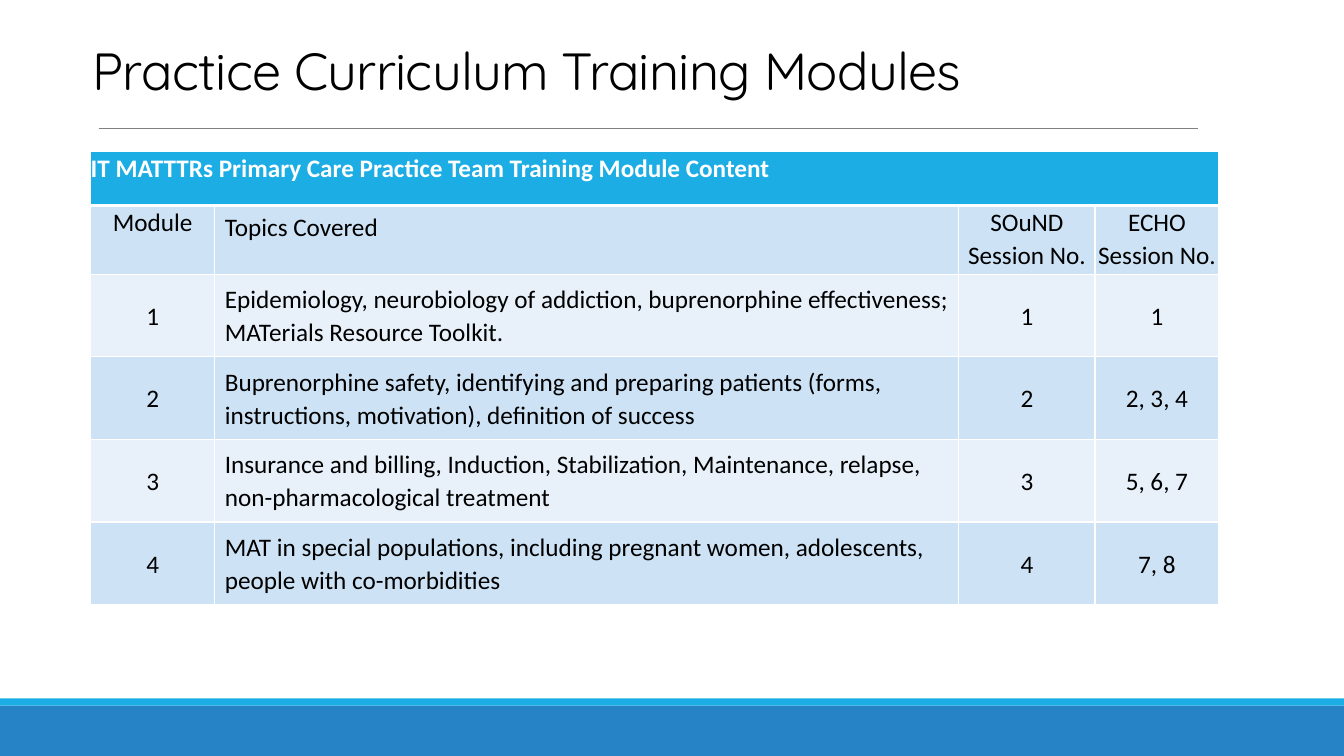
from lxml import etree
from pptx import Presentation
from pptx.dml.color import RGBColor
from pptx.enum.shapes import MSO_CONNECTOR, MSO_SHAPE
from pptx.enum.text import MSO_ANCHOR as Anchor, PP_ALIGN as Align
from pptx.oxml import parse_xml
from pptx.oxml.ns import nsdecls, qn
from pptx.util import Inches, Pt

WHITE = RGBColor(0xFF, 0xFF, 0xFF)
BLACK = RGBColor(0x00, 0x00, 0x00)
GRAY = RGBColor(0x80, 0x80, 0x80)
BLUE = RGBColor(0x26, 0x83, 0xC6)
CYAN = RGBColor(0x1C, 0xAD, 0xE4)
DARK_BAND = RGBColor(0xCD, 0xE3, 0xF5)
LIGHT_BAND = RGBColor(0xE8, 0xF1, 0xFA)

COLUMN_WIDTHS = [1.23, 7.38, 1.35, 1.23]
ROW_HEIGHTS = [0.54, 0.68] + [0.82] * 4
TOPICS_COLUMN = 1
ROWS = [
    ["IT MATTTRs Primary Care Practice Team Training Module Content", "", "", ""],
    ["Module", "Topics Covered", "SOuND Session No.", "ECHO Session No."],
    ["1", "Epidemiology, neurobiology of addiction, buprenorphine effectiveness; "
     "MATerials Resource Toolkit.", "1", "1"],
    ["2", "Buprenorphine safety, identifying and preparing patients (forms, "
     "instructions, motivation), definition of success", "2", "2, 3, 4"],
    ["3", "Insurance and billing, Induction, Stabilization, Maintenance, relapse, "
     "non-pharmacological treatment", "3", "5, 6, 7"],
    ["4", "MAT in special populations, including pregnant women, adolescents, "
     "people with co-morbidities", "4", "7, 8"],
]


def set_borders(cell, top, bottom):
    """Give the cell white borders: 1 pt at the sides, top and bottom in points."""
    properties = cell._tc.get_or_add_tcPr()
    for side, width in (("L", 1), ("R", 1), ("T", top), ("B", bottom)):
        properties.append(parse_xml(
            f'<a:ln{side} {nsdecls("a")} w="{Pt(width)}"><a:solidFill>'
            f'<a:srgbClr val="{WHITE}"/></a:solidFill></a:ln{side}>'))


deck = Presentation()
deck.slide_width, deck.slide_height = Inches(13.33), Inches(7.5)
page = deck.slides.add_slide(deck.slide_layouts[6])

# Footer bars
for top, height, color in ((7, 0.5, BLUE), (6.93, 0.07, CYAN)):
    bar = page.shapes.add_shape(
        MSO_SHAPE.RECTANGLE, 0, Inches(top), deck.slide_width, Inches(height))
    bar.shadow.inherit = False
    bar.fill.solid()
    bar.fill.fore_color.rgb = color
    bar.line.fill.background()

# Title and rule
rule = page.shapes.add_connector(
    MSO_CONNECTOR.STRAIGHT, Inches(0.98), Inches(1.27), Inches(11.88), Inches(1.27))
rule.line.color.rgb = GRAY
rule.line.width = Pt(0.5)
etree.SubElement(rule._element.spPr, qn("a:effectLst"))

title = page.shapes.add_textbox(Inches(0.82), Inches(0.34), Inches(11), Inches(0.71))
title.text_frame.word_wrap = True
title.text_frame.vertical_anchor = Anchor.BOTTOM
para = title.text_frame.paragraphs[0]
para.text = "Practice Curriculum Training Modules"
para.line_spacing = 0.85
span = para.runs[0]
span.font.name = "Quicksand"
span.font.size = Pt(37.3)
span.font.color.rgb = BLACK
span.font._element.set("spc", "-50")

# Training module table
table = page.shapes.add_table(
    len(ROWS), len(COLUMN_WIDTHS), Inches(0.9), Inches(1.5),
    Inches(sum(COLUMN_WIDTHS)), Inches(sum(ROW_HEIGHTS))).table
for column, width in zip(table.columns, COLUMN_WIDTHS):
    column.width = Inches(width)
for row, height in zip(table.rows, ROW_HEIGHTS):
    row.height = Inches(height)
table.cell(0, 0).merge(table.cell(0, len(COLUMN_WIDTHS) - 1))

for r, texts in enumerate(ROWS):
    is_banner = r == 0
    for c, text in enumerate(texts):
        cell = table.cell(r, c)
        set_borders(cell, top=3 if r == 1 else 1, bottom=3 if is_banner else 1)
        cell.fill.solid()
        cell.fill.fore_color.rgb = (
            CYAN if is_banner else DARK_BAND if r % 2 else LIGHT_BAND)
        cell.vertical_anchor = Anchor.MIDDLE if r > 1 else Anchor.TOP
        is_topic = c == TOPICS_COLUMN and not is_banner
        if not is_topic:
            cell.margin_left = cell.margin_right = 0
            cell.margin_top = cell.margin_bottom = 0
        if not text:
            continue
        para = cell.text_frame.paragraphs[0]
        para.text = text
        para.line_spacing = 1.07
        para.alignment = Align.LEFT if is_banner or is_topic else Align.CENTER
        font = para.runs[0].font
        font.name = "Calibri"
        font.size = Pt(18)
        font.bold = is_banner
        font.color.rgb = WHITE if is_banner else BLACK

# Rows from the second module on alternate starting with the dark band
for r in range(2, len(ROWS)):
    for c in range(len(COLUMN_WIDTHS)):
        table.cell(r, c).fill.fore_color.rgb = LIGHT_BAND if r % 2 == 0 else DARK_BAND

deck.save("out.pptx")
